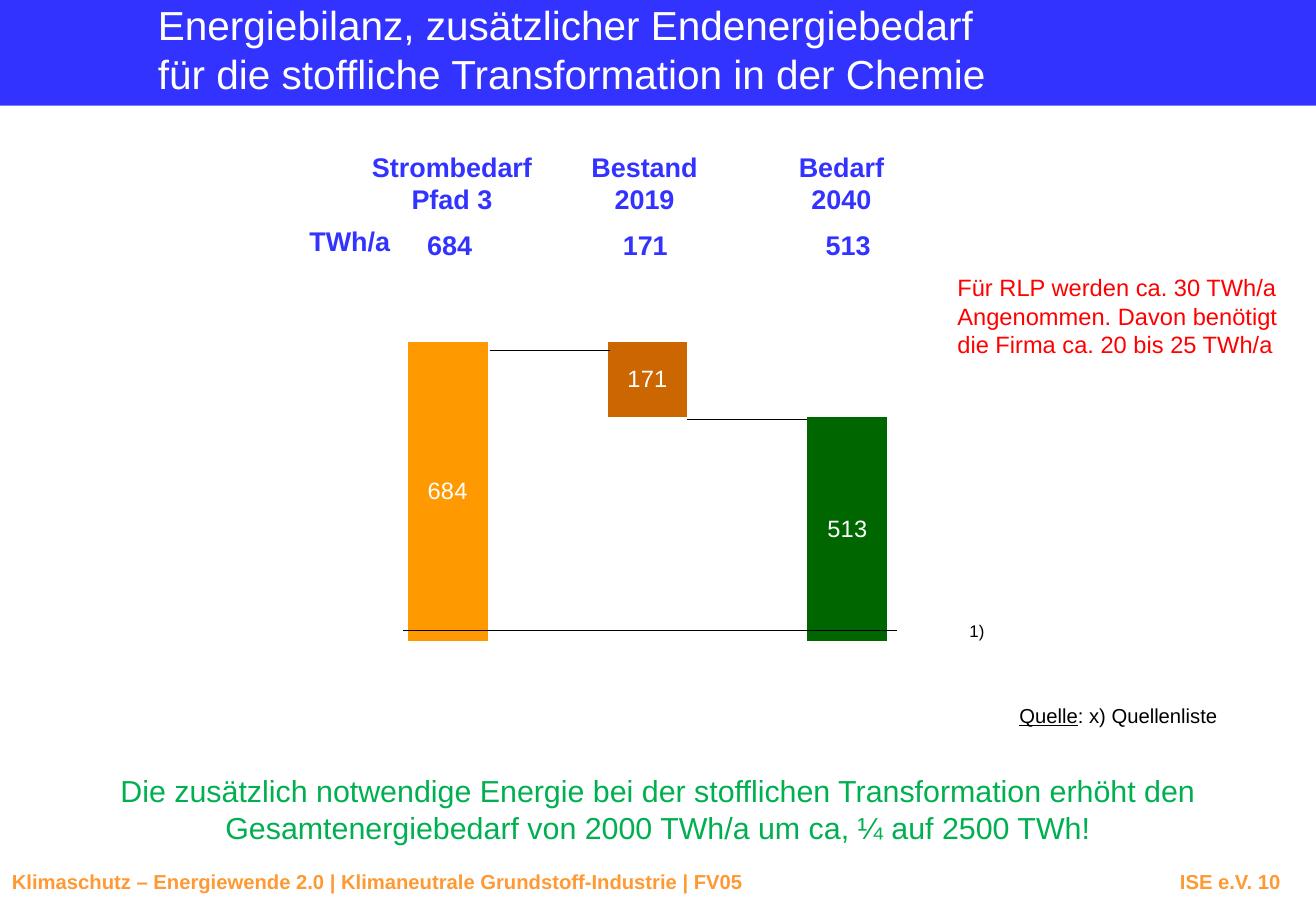
from lxml.etree import SubElement
from pptx import Presentation
from pptx.chart.data import CategoryChartData as Data
from pptx.dml.color import RGBColor as Rgb
from pptx.enum.chart import XL_CHART_TYPE as Kind, XL_LABEL_POSITION as Spot
from pptx.enum.shapes import MSO_CONNECTOR as Link, MSO_SHAPE as Form
from pptx.enum.text import MSO_ANCHOR as Anchor, MSO_AUTO_SIZE as Fit, PP_ALIGN as Align
from pptx.oxml.ns import qn
from pptx.util import Inches, Pt

WIDE, HIGH = Inches(10.83), Inches(7.5)
FONT = "Arial"
HUES = {
    "blue": "3333FF", "white": "FFFFFF", "black": "000000", "red": "FF0000",
    "green": "00B050", "foot": "FF9933", "need": "FF9900", "stock": "CC6600",
    "rest": "006600",
}
COLS = [
    ("Strombedarf", "Pfad 3", 684, 34.35, 14.2, 34.16),
    ("Bestand", "2019", 171, 48.98, 10.1, 49.03),
    ("Bedarf", "2040", 513, 63.94, 8.4, 64.45),
]


def hue(name):
    return Rgb.from_string(HUES[name])


def across(share):
    return int(WIDE * share / 100)


def down(share):
    return int(HIGH * share / 100)


def area(x, y, w, h):
    return across(x), down(y), across(w), down(h)


def style(font, size, color, bold=False):
    font.name, font.size, font.bold = FONT, Pt(size), bold
    font.color.rgb = hue(color)


def write(frame, lines, size, color, bold=False, align=Align.LEFT):
    for i, line in enumerate(lines):
        para = frame.paragraphs[0] if i == 0 else frame.add_paragraph()
        para.alignment = align
        for text, under in [(line, False)] if isinstance(line, str) else line:
            run = para.add_run()
            run.text = text
            style(run.font, size, color, bold)
            if under:
                run.font.underline = True


def add_text(slide, box, lines, size, color, bold=False, align=Align.LEFT, wrap=False):
    frame = slide.shapes.add_textbox(*area(*box)).text_frame
    frame.word_wrap = wrap
    write(frame, lines, size, color, bold, align)
    return frame


def add_title(slide, lines):
    title = slide.shapes.title
    title.left, title.top, title.width, title.height = area(12, 0, 63.8, 10.8)
    frame = title.text_frame
    frame.margin_left = frame.margin_right = frame.margin_top = frame.margin_bottom = 0
    frame.word_wrap, frame.auto_size = False, Fit.NONE
    frame.vertical_anchor = Anchor.TOP
    write(frame, lines, 24, "white")
    band = slide.shapes.add_shape(Form.RECTANGLE, *area(0, 0, 100, 11.6))
    band.shadow.inherit = False
    band.fill.solid()
    band.fill.fore_color.rgb = hue("blue")
    band.line.fill.background()
    title.element.addprevious(band.element)


def add_rule(slide, left, right, y):
    rule = slide.shapes.add_connector(
        Link.STRAIGHT, across(left), down(y), across(right), down(y))
    rule.line.color.rgb = hue("black")
    rule.line.width = Pt(0.25)
    SubElement(rule.element.spPr, qn("a:effectLst"))


def set_plot(chart):
    plot = chart.element.chart.plotArea
    layout = plot.find(qn("c:layout"))
    if layout is None:
        layout = SubElement(plot, qn("c:layout"))
        plot.insert(0, layout)
    manual = SubElement(layout, qn("c:manualLayout"))
    parts = [("layoutTarget", "inner"), ("xMode", "edge"), ("yMode", "edge"),
             ("x", "0.02"), ("y", "0.02"), ("w", "0.96"), ("h", "0.96")]
    for tag, val in parts:
        SubElement(manual, qn(f"c:{tag}")).set("val", val)


def add_bars(slide, box):
    need, stock, rest = (col[2] for col in COLS)
    data = Data(number_format="#,##0")
    data.categories = ["1", "2", "3"]
    data.add_series("Series 1", [need, rest, rest])
    data.add_series("Series 2", [None, stock, None])
    chart = slide.shapes.add_chart(Kind.COLUMN_STACKED, *area(*box), data).chart
    chart.has_legend = chart.has_title = False
    style(chart.font, 10, "black")
    for axis in (chart.category_axis, chart.value_axis):
        axis.has_major_gridlines = False
        axis.visible = False
    chart.value_axis.minimum_scale = 0
    chart.value_axis.maximum_scale = 800
    plot = chart.plots[0]
    plot.gap_width, plot.overlap = 150, 100
    plot.vary_by_categories = False
    base, top = plot.series
    base.points[1].format.fill.background()
    for series, index, color in [(base, 0, "need"), (top, 1, "stock"), (base, 2, "rest")]:
        point = series.points[index]
        point.format.fill.solid()
        point.format.fill.fore_color.rgb = hue(color)
        style(point.data_label.font, 14, "white")
        point.data_label.position = Spot.CENTER
    set_plot(chart)


def add_heads(slide):
    look = (16, "blue", True, Align.CENTER)
    add_text(slide, (22.53, 24, 8.1, 4.93), ["TWh/a"], *look)
    for name, sub, value, mid, wide, spot in COLS:
        add_text(slide, (mid - wide / 2, 15.87, wide, 8.53), [name, sub], *look)
        add_text(slide, (spot - 2.7, 24.4, 5.4, 4.93), [str(value)], *look)


def add_foot(slide, left, right):
    frame = add_text(slide, (0, 94.8, 100, 5.2), [f"{left}\t{right}"],
                     12, "foot", True, wrap=True)
    props = frame.paragraphs[0]._p.get_or_add_pPr()
    stop = SubElement(SubElement(props, qn("a:tabLst")), qn("a:tab"))
    stop.set("pos", str(int(Inches(10.44))))
    stop.set("algn", "r")


def main():
    deck = Presentation()
    deck.slide_width, deck.slide_height = WIDE, HIGH
    slide = deck.slides.add_slide(deck.slide_layouts[5])
    add_title(slide, ["Energiebilanz, zusätzlicher Endenergiebedarf",
                      "für die stoffliche Transformation in der Chemie"])
    add_foot(slide, "Klimaschutz – Energiewende 2.0 | Klimaneutrale Grundstoff-Industrie | FV05",
             "ISE e.V. 10")
    add_bars(slide, (25.48, 31.2, 47.46, 40))
    add_text(slide, (0, 84.13, 100, 9.47),
             ["Die zusätzlich notwendige Energie bei der stofflichen Transformation erhöht den "
              "Gesamtenergiebedarf von 2000 TWh/a um ca, ¼ auf 2500 TWh!"],
             18, "green", align=Align.CENTER, wrap=True)
    add_heads(slide)
    for left, right, y in [(30.66, 68.14, 69.2), (37.2, 46.35, 38.4), (52.17, 61.3, 46)]:
        add_rule(slide, left, right, y)
    add_text(slide, (71.84, 29.33, 26.3, 10.8),
             ["Für RLP werden ca. 30 TWh/a", "Angenommen. Davon benötigt",
              "die Firma ca. 20 bis 25 TWh/a"], 14, "red")
    add_text(slide, (72.76, 67.47, 3.05, 3.6), ["1)"], 10, "black")
    add_text(slide, (76.55, 76.53, 17, 4),
             [[("Quelle", True), (": x) Quellenliste", False)]], 12, "black", wrap=True)
    deck.save("out.pptx")


if __name__ == "__main__":
    main()
